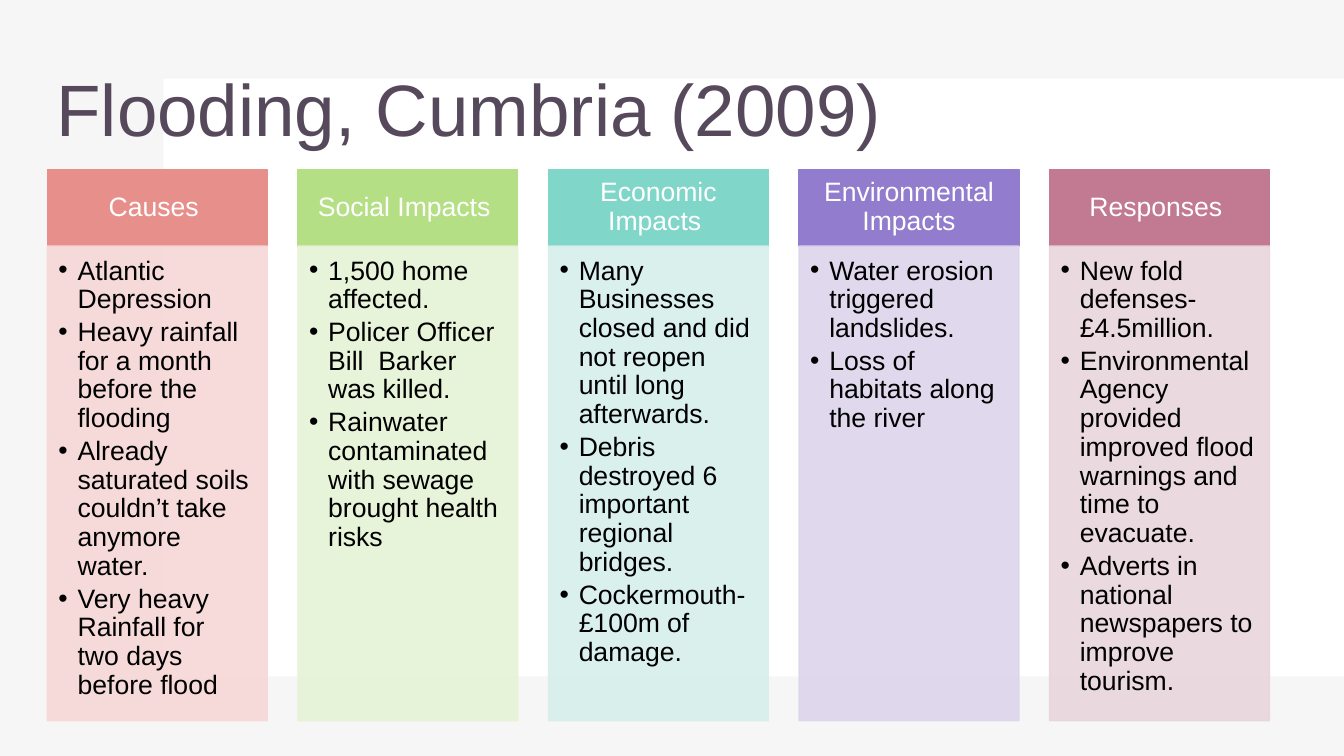
from pptx import Presentation
from pptx.dml.color import RGBColor
from pptx.enum.shapes import MSO_SHAPE
from pptx.enum.text import MSO_ANCHOR, MSO_AUTO_SIZE, PP_ALIGN
from pptx.oxml.ns import qn
from pptx.util import Inches, Pt
from lxml import etree

RECT = MSO_SHAPE.RECTANGLE
TOP, MIDDLE = MSO_ANCHOR.TOP, MSO_ANCHOR.MIDDLE
LEFT, CENTER = PP_ALIGN.LEFT, PP_ALIGN.CENTER
NO_FIT = MSO_AUTO_SIZE.NONE

WHITE = RGBColor(0xFF, 0xFF, 0xFF)
BLACK = RGBColor(0x00, 0x00, 0x00)
GREY = RGBColor(0xE7, 0xE6, 0xE6)
PLUM = RGBColor(0x57, 0x49, 0x5C)
CORAL, BLUSH = RGBColor(0xE7, 0x90, 0x8B), RGBColor(0xF6, 0xD8, 0xD7)
GREEN, LIME = RGBColor(0xB5, 0xDF, 0x84), RGBColor(0xE6, 0xF3, 0xD6)
TEAL, MINT = RGBColor(0x7F, 0xD6, 0xC9), RGBColor(0xD6, 0xEF, 0xEC)
PURPLE, LILAC = RGBColor(0x92, 0x7C, 0xCD), RGBColor(0xDD, 0xD5, 0xEC)
ROSE, PINK = RGBColor(0xC2, 0x79, 0x92), RGBColor(0xE8, 0xD5, 0xDB)

COLUMNS = [
    ("Causes ", CORAL, BLUSH, [
        "Atlantic Depression",
        "Heavy rainfall for a month before the flooding",
        "Already saturated soils couldn’t take anymore water.",
        "Very heavy Rainfall for two days before flood"]),
    ("Social Impacts ", GREEN, LIME, [
        "1,500 home affected.",
        "Policer Officer Bill  Barker was killed.",
        "Rainwater contaminated with sewage brought health risks"]),
    ("Economic Impacts ", TEAL, MINT, [
        "Many Businesses closed and did not reopen until long afterwards.",
        "Debris destroyed 6 important regional bridges.",
        "Cockermouth- £100m of damage."]),
    ("Environmental Impacts", PURPLE, LILAC, [
        "Water erosion triggered landslides.",
        "Loss of habitats along the river"]),
    ("Responses ", ROSE, PINK, [
        "New fold defenses- £4.5million.",
        "Environmental Agency provided improved flood warnings and time to evacuate.",
        "Adverts in national newspapers to improve tourism."]),
]
START, STEP, WIDTH = 0.47, 2.485, 2.18

prs = Presentation()
prs.slide_width, prs.slide_height = Inches(13.33), Inches(7.5)
slide = prs.slides.add_slide(prs.slide_layouts[5])
shapes = slide.shapes


def add_box(x, y, w, h, color, alpha=100, edge=True):
    box = shapes.add_shape(RECT, Inches(x), Inches(y), Inches(w), Inches(h))
    box.shadow.inherit = False
    box.fill.solid()
    box.fill.fore_color.rgb = color
    if edge:
        box.line.color.rgb = color
        box.line.width = Pt(1)
    else:
        box.line.fill.background()
    if alpha < 100:
        for tint in box._element.spPr.iter(qn("a:srgbClr")):
            etree.SubElement(tint, qn("a:alpha"), val=str(alpha * 1000))
    return box


def write(shape, lines, size, color, align, anchor, insets, bullets=False):
    frame = shape.text_frame
    frame.text = "\n".join(lines)
    form = {"word_wrap": True, "auto_size": NO_FIT, "vertical_anchor": anchor}
    sides = ("margin_left", "margin_top", "margin_right", "margin_bottom")
    form.update(zip(sides, map(Inches, insets)))
    for name, value in form.items():
        setattr(frame, name, value)
    for i, para in enumerate(frame.paragraphs):
        look = {"alignment": align, "line_spacing": 0.9,
                "space_before": Pt(2.9 if i else 0)}
        for name, value in look.items():
            setattr(para, name, value)
        for name, value in {"name": "Arial", "size": Pt(size)}.items():
            setattr(para.font, name, value)
        para.font.color.rgb = color
        if bullets:
            props = para._p.get_or_add_pPr()
            props.set("marL", str(Inches(0.19)))
            props.set("indent", str(-Inches(0.19)))
            etree.SubElement(props, qn("a:buFont"), typeface="Arial")
            etree.SubElement(props, qn("a:buChar"), char="•")


# Backdrop
add_box(0, 0, 13.33, 7.5, GREY, 35, edge=False)
add_box(1.62, 0.78, 11.71, 5.93, WHITE, edge=False)

# Title, raised above the backdrop
title = shapes.title
place = {"left": 0.46, "top": 0.4, "width": 11.53, "height": 1.45}
for name, value in place.items():
    setattr(title, name, Inches(value))
write(title, ["Flooding, Cumbria (2009)"], 52, PLUM, LEFT, MIDDLE,
      (0.1, 0.05, 0.1, 0.05))
shapes._spTree.append(title._element)

# Columns: heading above a bulleted list
for i, (name, dark, light, points) in enumerate(COLUMNS):
    x = START + i * STEP
    head = add_box(x, 1.68, WIDTH, 0.76, dark)
    write(head, [name], 19, WHITE, CENTER, MIDDLE, (0.15, 0.08, 0.15, 0.08))
    body = add_box(x, 2.44, WIDTH, 4.71, light, 90)
    write(body, points, 19, BLACK, LEFT, TOP, (0.11, 0.11, 0.15, 0.17), True)

prs.save("out.pptx")
